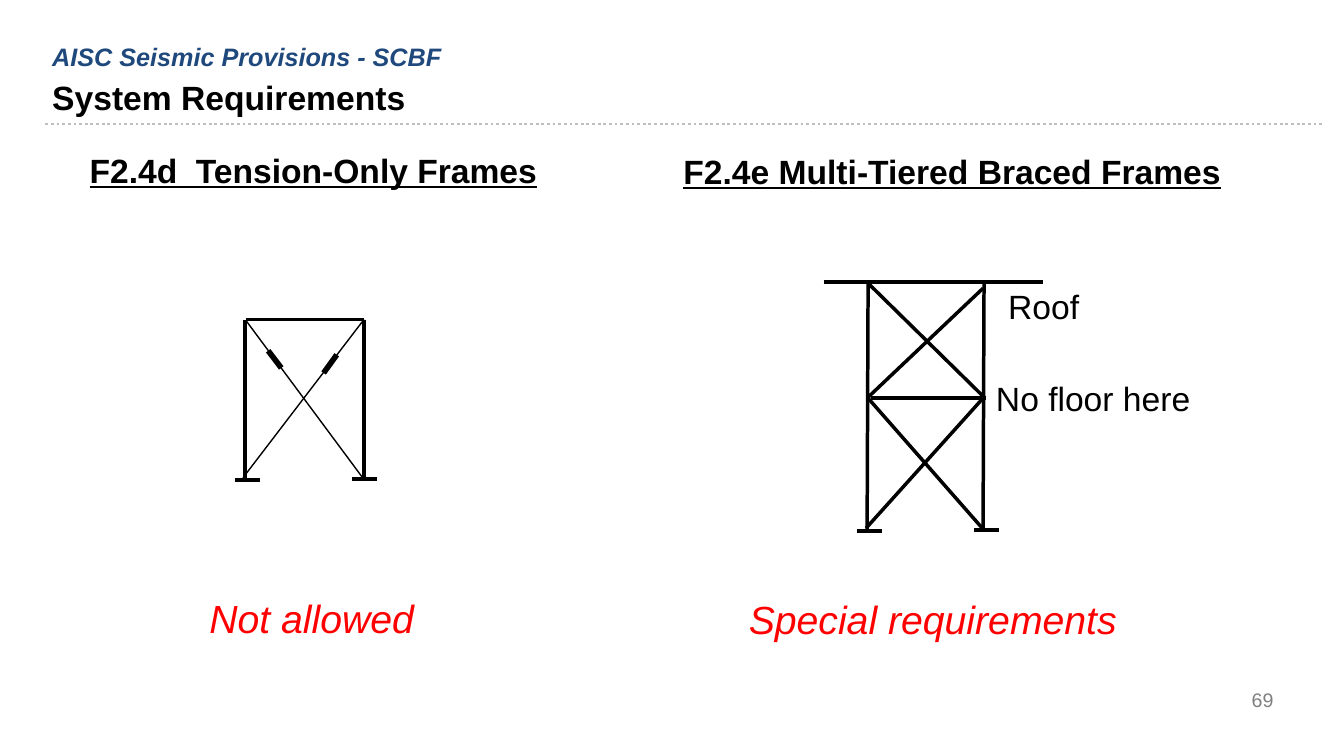
from dataclasses import dataclass

from lxml import etree
from pptx import Presentation
from pptx import util as u
from pptx.dml.color import RGBColor
from pptx.enum import dml, shapes, text
from pptx.oxml import ns

PX = 9144
BLACK, NAVY, RED, GREY, SILVER = "000000", "1F497D", "FF0000", "7F7F7F", "BFBFBF"
LEFT, CENTER, RIGHT = text.PP_ALIGN.LEFT, text.PP_ALIGN.CENTER, text.PP_ALIGN.RIGHT
FOOT_WIDTH = 25


@dataclass
class Label:
    words: str
    x: int
    y: int
    w: int
    h: int
    size: int = 24
    color: str = BLACK
    bold: bool = False
    italic: bool = False
    underline: bool = False
    align: text.PP_ALIGN = LEFT
    anchor: text.MSO_ANCHOR = text.MSO_ANCHOR.TOP


@dataclass
class Member:
    x1: int
    y1: int
    x2: int
    y2: int
    weight: float = 2.5


@dataclass
class Foot:
    x: int
    y: int


LABELS = [
    Label("System Requirements", 42, 71, 1197, 44, bold=True),
    Label("AISC Seismic Provisions - SCBF", 42, 36, 1197, 31, 18, NAVY, bold=True, italic=True),
    Label("69", 962, 674, 311, 40, 14, GREY, align=RIGHT, anchor=text.MSO_ANCHOR.MIDDLE),
    Label("F2.4d  Tension-Only Frames", 79, 144, 686, 50, bold=True, underline=True),
    Label("F2.4e Multi-Tiered Braced Frames", 668, 145, 558, 50, bold=True, underline=True),
    Label("Not allowed", 155, 585, 308, 57, 28, RED, italic=True, align=CENTER),
    Label("Special requirements", 704, 586, 442, 57, 28, RED, italic=True, align=CENTER),
    Label("No floor here", 978, 370, 248, 50),
    Label("Roof", 990, 279, 211, 50),
]

TENSION_FRAME = [
    Member(243, 317, 243, 476),
    Member(361, 317, 361, 476),
    Member(244, 317, 361, 317),
    Member(244, 318, 359, 473, 1),
    Member(241, 474, 361, 317, 1),
    Member(321, 370, 334, 352, 4),
    Member(279, 365, 266, 348, 4),
]

TIERED_FRAME = [
    Member(861, 282, 860, 527),
    Member(976, 281, 975, 527),
    Member(817, 280, 1034, 280),
    Member(864, 395, 978, 395),
    Member(861, 281, 977, 395),
    Member(860, 395, 975, 286),
    Member(861, 395, 976, 526),
    Member(859, 524, 975, 395),
]

FEET = [Foot(245, 476), Foot(361, 475), Foot(862, 527), Foot(978, 526)]


def px(n: int) -> u.Emu:
    return u.Emu(n * PX)


def rgb(color: str) -> RGBColor:
    return RGBColor.from_string(color)


def draw_member(s, m: Member, color: str = BLACK):
    line = s.shapes.add_connector(
        shapes.MSO_CONNECTOR.STRAIGHT, px(m.x1), px(m.y1), px(m.x2), px(m.y2)
    )
    line.line.color.rgb = rgb(color)
    line.line.width = u.Pt(m.weight)
    etree.SubElement(line._element.spPr, ns.qn("a:effectLst"))
    return line


def draw_foot(s, foot: Foot) -> None:
    left = foot.x - FOOT_WIDTH // 2
    draw_member(s, Member(left, foot.y, left + FOOT_WIDTH, foot.y))


def draw_label(s, label: Label) -> None:
    sp = s.shapes.add_textbox(px(label.x), px(label.y), px(label.w), px(label.h))
    tf = sp.text_frame
    tf.word_wrap = True
    tf.vertical_anchor = label.anchor
    p = tf.paragraphs[0]
    p.alignment = label.align
    r = p.add_run()
    r.text = label.words
    r.font.name = "Arial"
    r.font.size = u.Pt(label.size)
    r.font.color.rgb = rgb(label.color)
    r.font.bold = label.bold
    r.font.italic = label.italic
    r.font.underline = label.underline


def main() -> None:
    prs = Presentation()
    prs.slide_width, prs.slide_height = px(1333), px(750)
    s = prs.slides.add_slide(prs.slide_layouts[6])
    rule = draw_member(s, Member(45, 123, 1312, 123, 2), SILVER)
    rule.line.dash_style = dml.MSO_LINE.ROUND_DOT
    for member in TENSION_FRAME + TIERED_FRAME:
        draw_member(s, member)
    for foot in FEET:
        draw_foot(s, foot)
    for label in LABELS:
        draw_label(s, label)
    prs.save("out.pptx")


if __name__ == "__main__":
    main()
